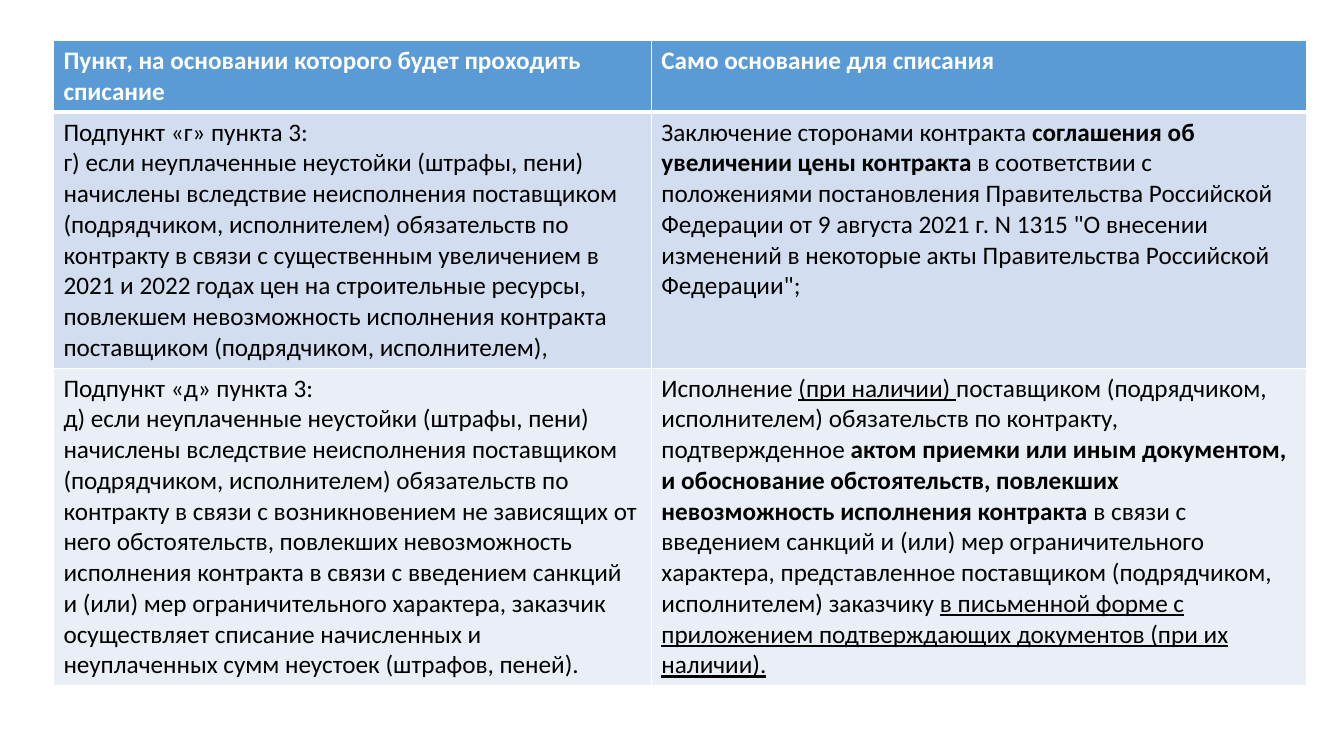
from dataclasses import dataclass

from lxml.etree import SubElement
from pptx import Presentation
from pptx.dml.color import RGBColor
from pptx.oxml.ns import qn
from pptx.table import _Cell as Cell
from pptx.util import Inches, Pt

WHITE = RGBColor(0xFF, 0xFF, 0xFF)
BLACK = RGBColor(0x00, 0x00, 0x00)
HEADER_BLUE = RGBColor(0x5B, 0x9B, 0xD5)
BAND_BLUE = RGBColor(0xD2, 0xDE, 0xEF)
BAND_PALE = RGBColor(0xEA, 0xEF, 0xF7)

COLUMN_WIDTHS = (5.93, 6.5)
FONT = {"name": "Calibri", "size": Pt(18)}


@dataclass(frozen=True)
class Run:
    text: str
    bold: bool = False
    underline: bool = False


Paragraphs = list[list[Run]]


@dataclass(frozen=True)
class Row:
    height: float
    fill: RGBColor
    color: RGBColor
    bottom_border: int
    cells: tuple[Paragraphs, Paragraphs]


# Wording shared by both subparagraphs
UNPAID = (
    "если неуплаченные неустойки (штрафы, пени) начислены вследствие "
    "неисполнения поставщиком (подрядчиком, исполнителем) обязательств "
    "по контракту в связи с "
)


def subparagraph(letter: str, reason: str) -> Paragraphs:
    return [
        [Run(f"Подпункт «{letter}» пункта 3:")],
        [Run(f"{letter}) {UNPAID}{reason}")],
    ]


ROWS = (
    Row(0.7, HEADER_BLUE, WHITE, 3, (
        [[Run("Пункт, на основании которого будет проходить списание", bold=True)]],
        [[Run("Само основание для списания", bold=True)]],
    )),
    Row(2.5, BAND_BLUE, BLACK, 1, (
        subparagraph(
            "г",
            "существенным увеличением в 2021 и 2022 годах цен на строительные "
            "ресурсы, повлекшем невозможность исполнения контракта поставщиком "
            "(подрядчиком, исполнителем),",
        ),
        [[
            Run("Заключение сторонами контракта "),
            Run("соглашения об увеличении цены контракта ", bold=True),
            Run("в соответствии с положениями постановления Правительства "
                "Российской Федерации от 9 августа 2021 г. N 1315 \"О внесении "
                "изменений в некоторые акты Правительства Российской Федерации\";"),
        ]],
    )),
    Row(3.1, BAND_PALE, BLACK, 1, (
        subparagraph(
            "д",
            "возникновением не зависящих от него обстоятельств, повлекших "
            "невозможность исполнения контракта в связи с введением санкций и "
            "(или) мер ограничительного характера, заказчик осуществляет списание "
            "начисленных и неуплаченных сумм неустоек (штрафов, пеней).",
        ),
        [[
            Run("Исполнение "),
            Run("(при наличии) ", underline=True),
            Run("поставщиком (подрядчиком, исполнителем) обязательств по "
                "контракту, подтвержденное "),
            Run("актом приемки или иным документом, и обоснование обстоятельств, "
                "повлекших невозможность исполнения контракта", bold=True),
            Run(" в связи с введением санкций и (или) мер ограничительного "
                "характера, представленное поставщиком (подрядчиком, "
                "исполнителем) заказчику "),
            Run("в письменной форме с приложением подтверждающих документов "
                "(при их наличии).", underline=True),
        ]],
    )),
)


def set_borders(cell: Cell, top: int, bottom: int) -> None:
    properties = cell._tc.get_or_add_tcPr()
    for side, width in {"L": 1, "R": 1, "T": top, "B": bottom}.items():
        line = SubElement(properties, qn(f"a:ln{side}"), w=str(Pt(width)))
        fill = SubElement(line, qn("a:solidFill"))
        SubElement(fill, qn("a:srgbClr"), val=str(WHITE))


def write_text(cell: Cell, paragraphs: Paragraphs, color: RGBColor) -> None:
    frame = cell.text_frame
    for index, runs in enumerate(paragraphs):
        paragraph = frame.add_paragraph() if index else frame.paragraphs[0]
        for item in runs:
            run = paragraph.add_run()
            run.text = item.text
            font_format = FONT | {"bold": item.bold, "underline": item.underline}
            for attribute, value in font_format.items():
                setattr(run.font, attribute, value)
            run.font.color.rgb = color


def main() -> None:
    presentation = Presentation()
    presentation.slide_width = Inches(13.33)
    presentation.slide_height = Inches(7.5)
    slide = presentation.slides.add_slide(presentation.slide_layouts[6])

    # Table of write-off grounds
    table = slide.shapes.add_table(
        len(ROWS), len(COLUMN_WIDTHS), Inches(0.53), Inches(0.4),
        Inches(sum(COLUMN_WIDTHS)), Inches(sum(row.height for row in ROWS)),
    ).table
    for column, width in zip(table.columns, COLUMN_WIDTHS):
        column.width = Inches(width)

    # Rows and cells
    top_border = 1
    for row_index, row in enumerate(ROWS):
        table.rows[row_index].height = Inches(row.height)
        for column_index, paragraphs in enumerate(row.cells):
            cell = table.cell(row_index, column_index)
            set_borders(cell, top_border, row.bottom_border)
            cell.fill.solid()
            cell.fill.fore_color.rgb = row.fill
            write_text(cell, paragraphs, row.color)
        top_border = row.bottom_border

    presentation.save("out.pptx")


if __name__ == "__main__":
    main()
